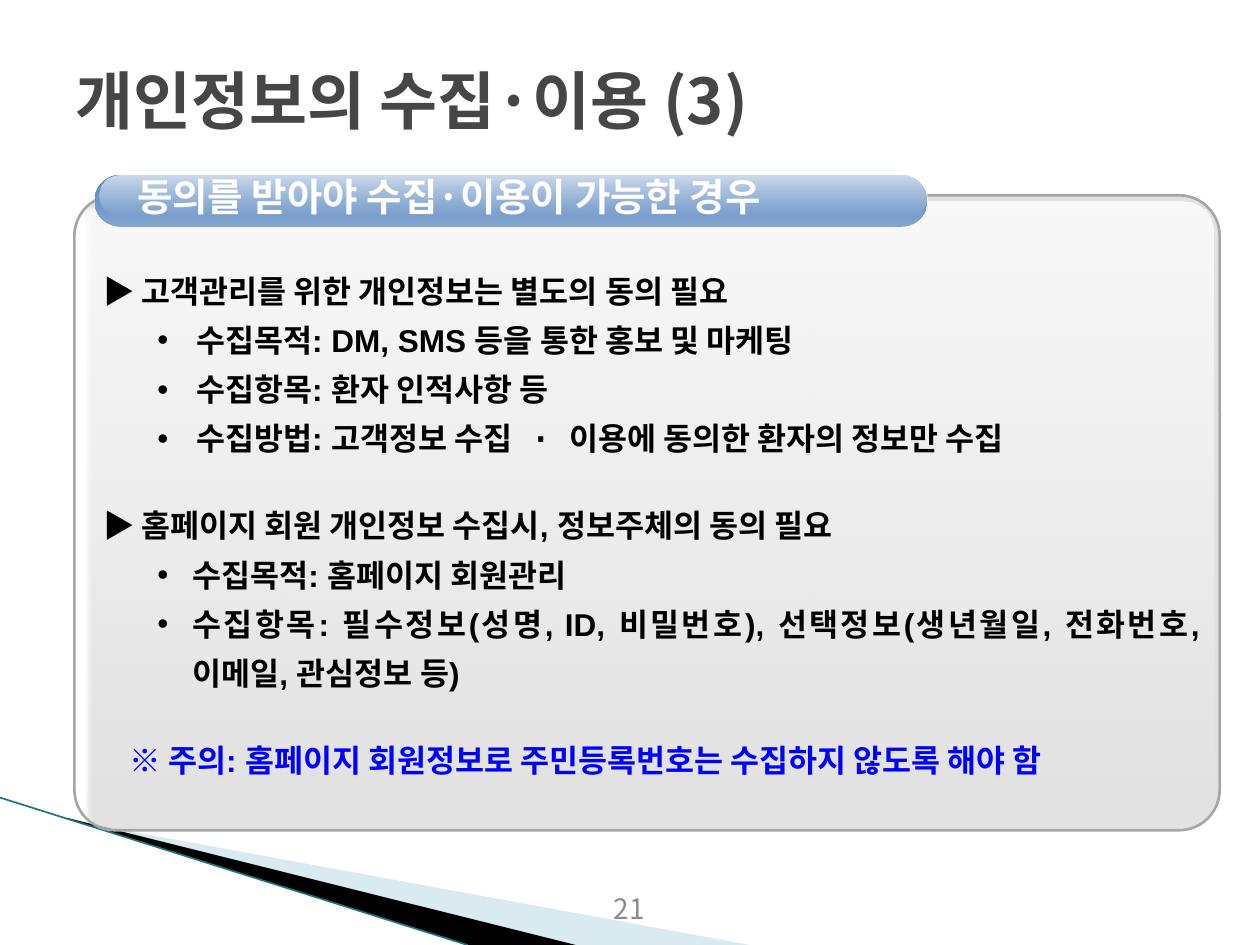
from lxml import etree
from pptx import Presentation
from pptx import util as u
from pptx.dml.color import RGBColor
from pptx.enum import shapes, text
from pptx.oxml import ns

COLORS = {
    "title": "464646", "ink": "000000", "note": "0000FF", "number": "8C8C8C",
    "white": "FFFFFF", "grey": "BFBFBF", "border": "A6A6A6",
    "pill_light": "82A5D0", "pill_dark": "5887C0",
    "wave": "A0CBDC", "wave_line": "1B7587",
}
KOREAN, LATIN, DOT = "Noto Sans CJK KR", "Arial", "DejaVu Sans Mono"
COLUMNS, ROWS = 100, 75


class SlideBuilder:
    """Places elements on a grid of 100 columns by 75 rows."""

    def __init__(self, presentation):
        self.slide = presentation.slides.add_slide(presentation.slide_layouts[5])
        self.cell_width = presentation.slide_width / COLUMNS
        self.cell_height = presentation.slide_height / ROWS

    def point(self, column, row):
        return round(column * self.cell_width), round(row * self.cell_height)

    def box(self, left, top, width, height):
        return self.point(left, top) + self.point(width, height)

    def color(self, name):
        return RGBColor.from_string(COLORS[name])

    def element(self, parent, tag, **attributes):
        return etree.SubElement(parent, ns.qn(tag), attributes)

    def title(self, words, area):
        title = self.slide.shapes.title
        title.left, title.top, title.width, title.height = self.box(*area)
        title.text_frame.vertical_anchor = text.MSO_ANCHOR.MIDDLE
        paragraph = title.text_frame.paragraphs[0]
        paragraph.alignment = text.PP_ALIGN.LEFT
        self.run(paragraph, words, 36, "title", KOREAN)

    def polygon(self, points, fill, opacity=100):
        corners = [self.point(*corner) for corner in points]
        builder = self.slide.shapes.build_freeform(*corners[0])
        builder.add_line_segments(corners[1:], close=True)
        shape = builder.convert_to_shape()
        shape.shadow.inherit = False
        shape.line.fill.background()
        shape.fill.solid()
        shape.fill.fore_color.rgb = self.color(fill)
        solid = shape.fill._xPr.find(ns.qn("a:solidFill"))
        self.element(solid[0], "a:alpha", val=str(opacity * 1000))

    def line(self, start, end, color, width):
        connector = self.slide.shapes.add_connector(
            shapes.MSO_CONNECTOR.STRAIGHT, *self.point(*start), *self.point(*end))
        connector.line.color.rgb = self.color(color)
        connector.line.width = u.Pt(width)
        self.element(connector._element.spPr, "a:effectLst")

    def rounded(self, area, radius, stops, angle, border=None):
        """Each stop is (position, colour, opacity), in percent."""
        shape = self.slide.shapes.add_shape(
            shapes.MSO_SHAPE.ROUNDED_RECTANGLE, *self.box(*area))
        shape.adjustments[0] = radius
        shape.shadow.inherit = False
        if border:
            shape.line.color.rgb = self.color(border)
            shape.line.width = u.Pt(1.5)
        else:
            shape.line.fill.background()
        shape.fill.gradient()
        gradient = shape._element.spPr.find(ns.qn("a:gradFill"))
        for child in list(gradient):
            gradient.remove(child)
        stop_list = self.element(gradient, "a:gsLst")
        for position, name, opacity in stops:
            stop = self.element(stop_list, "a:gs", pos=str(position * 1000))
            color = self.element(stop, "a:srgbClr", val=COLORS[name])
            self.element(color, "a:alpha", val=str(opacity * 1000))
        self.element(gradient, "a:lin", ang=str(angle * 60000), scaled="0")

    def text_box(self, area, anchor=text.MSO_ANCHOR.TOP):
        frame = self.slide.shapes.add_textbox(*self.box(*area)).text_frame
        frame.word_wrap = True
        frame.vertical_anchor = anchor
        return frame

    def run(self, paragraph, words, size, color, font=LATIN, bold=True):
        run = paragraph.add_run()
        run.text = words
        run.font.size, run.font.bold, run.font.name = u.Pt(size), bold, font
        run.font.color.rgb = self.color(color)
        self.element(run.font._element, "a:ea", typeface=KOREAN if font == LATIN else font)

    def label(self, area, words, size, color, align, bold=True, spacing=None):
        paragraph = self.text_box(area, text.MSO_ANCHOR.MIDDLE).paragraphs[0]
        paragraph.alignment = align
        paragraph.line_spacing = spacing
        self.run(paragraph, words, size, color, KOREAN, bold)

    def body(self, area, items):
        """Each item is (kind, space before, runs)."""
        frame = self.text_box(area)
        for number, (kind, before, runs) in enumerate(items):
            paragraph = frame.add_paragraph() if number else frame.paragraphs[0]
            margin, indent, spacing, bullet, color = KINDS[kind]
            paragraph.alignment = text.PP_ALIGN.LEFT if kind == "note" else text.PP_ALIGN.JUSTIFY
            paragraph.line_spacing = spacing
            paragraph.space_before = u.Pt(before)
            properties = paragraph._p.get_or_add_pPr()
            properties.set("marL", str(u.Inches(margin)))
            properties.set("indent", str(u.Inches(indent)))
            if bullet:
                self.element(properties, "a:buFont", typeface=LATIN)
                self.element(properties, "a:buChar", char=bullet)
            for words, font in runs:
                self.run(paragraph, words, 18, color, font)


# Paragraph kinds: margin, indent, line spacing, bullet, colour
KINDS = {
    "head": (0.49, -0.42, 1.3, None, "ink"),
    "point": (0.81, -0.31, 1.3, "•", "ink"),
    "detail": (0.78, -0.28, 1.3, "•", "ink"),
    "note": (0.28, 0, 1.0, None, "note"),
}

BODY = [
    ("head", 0, [("▶ 고객관리를 위한 개인정보는 별도의 동의 필요", LATIN)]),
    ("point", 0, [("수집목적: DM, SMS 등을 통한 홍보 및 마케팅", LATIN)]),
    ("point", 0, [("수집항목: 환자 인적사항 등", LATIN)]),
    ("point", 0, [("수집방법: 고객정보 수집", LATIN), (" · 이용", DOT),
                  ("에 동의한 환자의 정보만 수집", LATIN)]),
    ("head", 21.7, [("▶ 홈페이지 회원 개인정보 수집시, 정보주체의 동의 필요", LATIN)]),
    ("detail", 0, [("수집목적: 홈페이지 회원관리", LATIN)]),
    ("detail", 0, [("수집항목: 필수정보(성명, ID, 비밀번호), 선택정보"
                    "(생년월일, 전화번호, 이메일, 관심정보 등)", LATIN)]),
    ("note", 28, [("※ 주의: 홈페이지 회원정보로 주민등록번호는 수집하지 않도록 해야 함", LATIN)]),
]


def main():
    presentation = Presentation()
    presentation.slide_width, presentation.slide_height = u.Inches(10), u.Inches(7.5)
    builder = SlideBuilder(presentation)

    # Corner wave
    builder.polygon([(5.5, 65.1), (59.5, 75), (45.6, 75), (5.5, 65)], "wave", 40)
    builder.polygon([(5.3, 64.9), (45.7, 75), (37.2, 75), (5.4, 65)], "ink")
    builder.line((0, 63.3), (37.1, 75), "wave_line", 0.95)

    builder.title("개인정보의 수집·이용 (3)", (5, 1.6, 90, 12.5))

    # Panel with its sheen
    builder.rounded((5.9, 15.5, 90.9, 50.4), 0.064,
                    [(1, "white", 100), (2, "grey", 45)], 0, "border")
    builder.rounded((6.5, 16, 89.8, 47.5), 0.051,
                    [(0, "white", 81), (100, "white", 0)], 90)

    # Heading pill
    builder.rounded((7.5, 13.9, 66.1, 4.1), 0.5,
                    [(0, "pill_light", 100), (100, "pill_dark", 100)], 270)
    builder.rounded((7.9, 13.9, 65.7, 3.1), 0.5,
                    [(0, "white", 71), (100, "white", 0)], 90)
    builder.label((9.9, 14.1, 58.2, 3.8), "동의를 받아야 수집·이용이 가능한 경우",
                  22, "white", text.PP_ALIGN.LEFT, spacing=u.Pt(20))

    # Body and page number
    builder.body((6.5, 20.2, 89.7, 46), BODY)
    builder.label((38.3, 70.1, 23.3, 4), "21", 16, "number",
                  text.PP_ALIGN.CENTER, bold=False)

    presentation.save("out.pptx")


if __name__ == "__main__":
    main()
